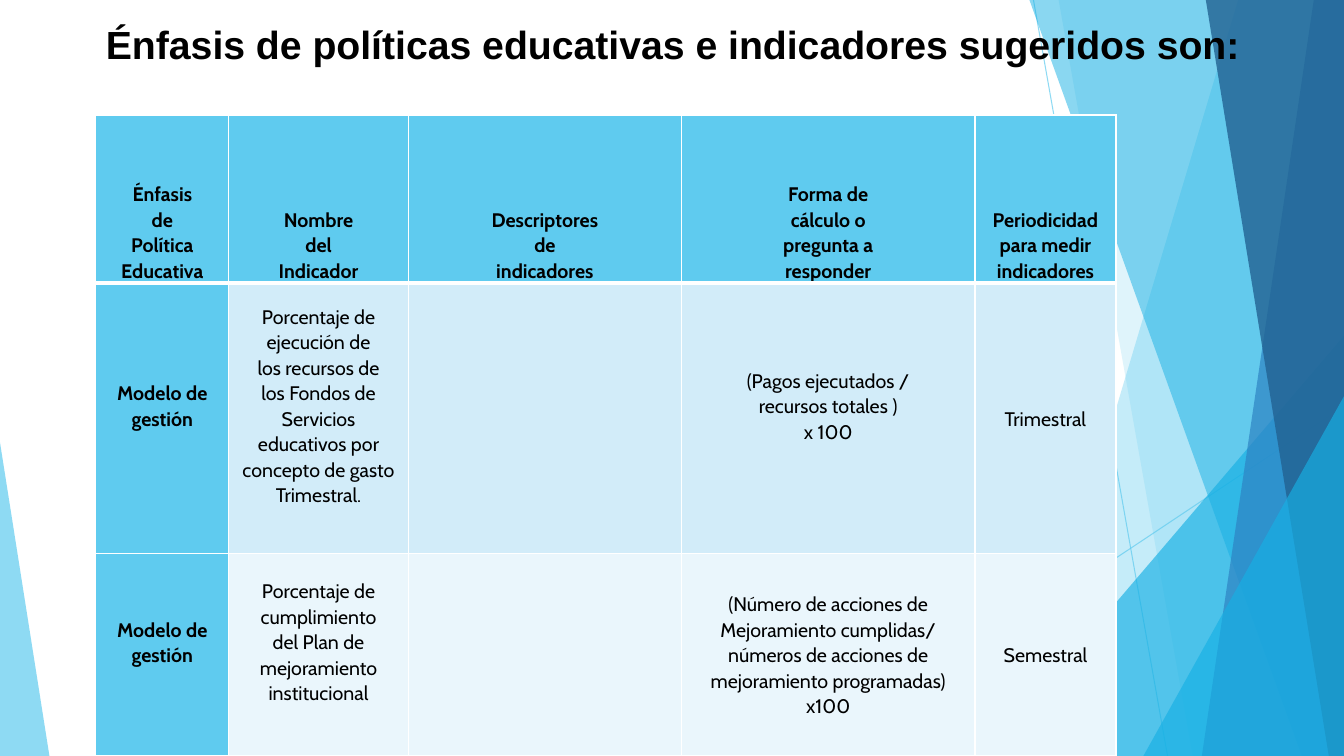
from lxml import etree
from pptx import Presentation
from pptx.dml.color import RGBColor
from pptx.enum.shapes import MSO_CONNECTOR, MSO_SHAPE
from pptx.enum.text import MSO_ANCHOR, MSO_AUTO_SIZE, PP_ALIGN
from pptx.oxml.ns import qn
from pptx.util import Pt

LINE = MSO_CONNECTOR.STRAIGHT
WEDGE = MSO_SHAPE.ISOSCELES_TRIANGLE
CENTER, LEFT = PP_ALIGN.CENTER, PP_ALIGN.LEFT
MIDDLE, BOTTOM = MSO_ANCHOR.MIDDLE, MSO_ANCHOR.BOTTOM
NO_FIT = MSO_AUTO_SIZE.NONE

SKY = RGBColor(0x5F, 0xCB, 0xEF)
CYAN = RGBColor(0x17, 0xB0, 0xE4)
BLUE = RGBColor(0x2E, 0x83, 0xC3)
NAVY = RGBColor(0x22, 0x62, 0x92)
PALE = RGBColor(0xD2, 0xEC, 0xF9)
MIST = RGBColor(0xEA, 0xF6, 0xFC)
BLACK = RGBColor(0, 0, 0)
WHITE = RGBColor(0xFF, 0xFF, 0xFF)

PX = 9144  # 100 px to the inch
WIDE, HIGH = 1333, 750
LIFT = 25  # one text line left free below a raised cell

TITLE = "Énfasis de políticas educativas e indicadores sugeridos son:"
COLS = [132, 178, 271, 291, 140]
ROWS = [167, 268, 201]
HEAD = [
    "Énfasis\nde\nPolítica\nEducativa",
    "Nombre\ndel\nIndicador",
    "Descriptores\nde\nindicadores",
    "Forma de\ncálculo o\npregunta a\nresponder",
    "Periodicidad\npara medir\nindicadores",
]
FUNDS = [
    "Modelo de\ngestión",
    "Porcentaje de\nejecución de\nlos recursos de\nlos Fondos de\nServicios\n"
    "educativos por concepto de gasto\nTrimestral.",
    "",
    "(Pagos ejecutados /\nrecursos totales )\nx 100",
    "Trimestral",
]
PLAN = [
    "Modelo de\ngestión",
    "Porcentaje de\ncumplimiento\ndel Plan de\nmejoramiento\ninstitucional",
    "",
    "(Número de acciones de\nMejoramiento cumplidas/\nnúmeros de acciones de\n"
    "mejoramiento programadas)\nx100",
    "Semestral",
]
# texts, fill, raised columns
BODY = [(HEAD, SKY, ()), (FUNDS, PALE, (0, 1, 3)), (PLAN, MIST, (0, 1))]


def apply(obj, vals):
    for key, val in vals.items():
        setattr(obj, key, val)


def fade(elem, pct):
    for color in elem.iter(qn("a:srgbClr")):
        etree.SubElement(color, qn("a:alpha"), val=str(pct * 1000))


class Page:
    cell_font = {"name": "Cabin", "size": Pt(14)}
    title_font = {"name": "Arial", "size": Pt(28), "bold": True}

    def __init__(self, deck):
        self.slide = deck.slides.add_slide(deck.slide_layouts[5])
        self.shapes = self.slide.shapes

    def label(self, frame, text, align, space, font):
        frame.text = text
        for para in frame.paragraphs:
            apply(para, {"alignment": align, "line_spacing": space})
            apply(para.font, font)
            para.font.color.rgb = BLACK

    def paint(self, shape, color, pct):
        shape.shadow.inherit = False
        shape.fill.solid()
        shape.fill.fore_color.rgb = color
        shape.line.fill.background()
        fade(shape._element.spPr, pct)

    def line(self, *ends):
        rule = self.shapes.add_connector(LINE, *[n * PX for n in ends])
        rule.line.color.rgb = SKY
        rule.line.width = Pt(0.75)
        props = rule._element.spPr
        fade(props, 70)
        etree.SubElement(props, qn("a:effectLst"))

    def band(self, top, foot, color, pct):
        """Fill from a slanted left edge to the right side of the slide."""
        pen = self.shapes.build_freeform(top, 0, scale=PX)
        pen.add_line_segments([(WIDE, 0), (WIDE, HIGH), (foot, HIGH)])
        self.paint(pen.convert_to_shape(), color, pct)

    def wedge(self, left, top, wide, tip, color, pct):
        """Triangle that stands on the bottom of the slide."""
        box = [n * PX for n in (left, top, wide, HIGH - top)]
        shape = self.shapes.add_shape(WEDGE, *box)
        shape.adjustments[0] = tip
        self.paint(shape, color, pct)

    def cell(self, cell, text, color, bold, head, lift):
        props = cell._tc.get_or_add_tcPr()
        for side in ("lnL", "lnR", "lnT", "lnB"):
            points = 3 if head and side == "lnB" else 1
            edge = etree.SubElement(props, qn("a:" + side), w=str(Pt(points)))
            fill = etree.SubElement(edge, qn("a:solidFill"))
            etree.SubElement(fill, qn("a:srgbClr"), val=str(WHITE))
        cell.fill.solid()
        cell.fill.fore_color.rgb = color
        apply(cell, {
            "margin_left": 2 * PX, "margin_right": 2 * PX,
            "margin_top": 0, "margin_bottom": lift * PX,
            "vertical_anchor": BOTTOM if head else MIDDLE,
        })
        if text:
            font = {**self.cell_font, "bold": bold}
            self.label(cell.text_frame, text, CENTER, 1.07, font)

    def table(self, left, top):
        box = [n * PX for n in (left, top, sum(COLS), sum(ROWS))]
        grid = self.shapes.add_table(len(ROWS), len(COLS), *box).table
        for col, wide in zip(grid.columns, COLS):
            col.width = wide * PX
        for row, high in zip(grid.rows, ROWS):
            row.height = high * PX
        for r, (texts, color, raised) in enumerate(BODY):
            for c, text in enumerate(texts):
                key = r == 0 or c == 0
                self.cell(grid.cell(r, c), text, SKY if key else color,
                          key, r == 0, LIFT if c in raised else 0)

    def title(self, text, left, top, wide, high):
        box = self.shapes.title
        apply(box, {"left": left * PX, "top": top * PX,
                    "width": wide * PX, "height": high * PX})
        frame = box.text_frame
        apply(frame, {"word_wrap": True, "auto_size": NO_FIT,
                      "vertical_anchor": MIDDLE})
        self.label(frame, text, LEFT, 1.0, self.title_font)
        self.shapes._spTree.append(box._element)  # bring to front


def main():
    deck = Presentation()
    apply(deck, {"slide_width": WIDE * PX, "slide_height": HIGH * PX})
    page = Page(deck)

    # Facets on both sides
    page.line(1025, 0, 1158, HIGH)
    page.line(WIDE, 403, 812, HIGH)
    page.band(1228, 1004, SKY, 36)
    page.band(1050, 1183, SKY, 20)
    page.wedge(977, 333, 356, 1, CYAN, 66)
    page.band(1021, 1291, CYAN, 50)
    page.band(1303, 1192, BLUE, 70)
    page.band(1196, 1318, NAVY, 80)
    page.wedge(1134, 393, 199, 1, CYAN, 66)
    page.wedge(0, 439, 49, 0, SKY, 70)

    # Indicators and heading
    page.table(95, 114)
    page.title(TITLE, 95, 15, 1157, 57)

    deck.save("out.pptx")


if __name__ == "__main__":
    main()
